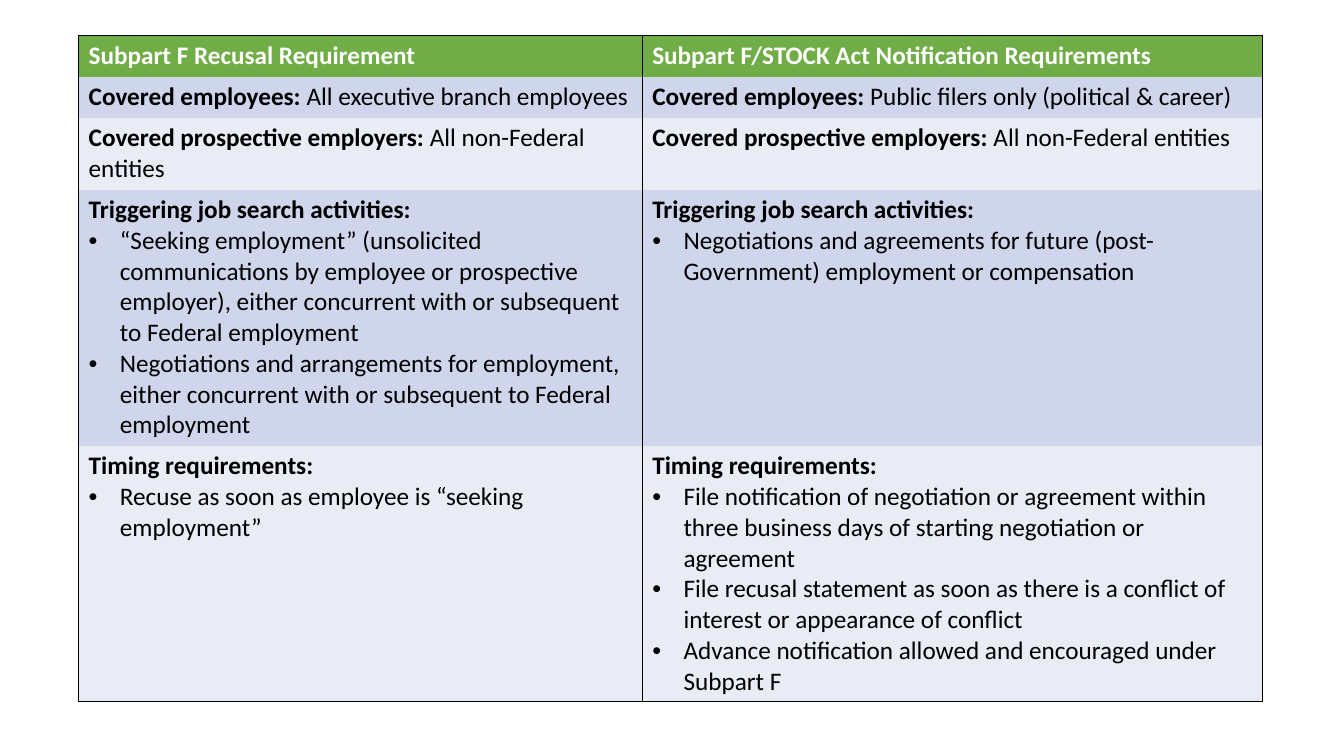
from lxml import etree
from pptx import Presentation
from pptx.dml.color import RGBColor
from pptx.oxml import ns
from pptx.util import Inches, Pt

WHITE = RGBColor(0xFF, 0xFF, 0xFF)
BLACK = RGBColor(0x00, 0x00, 0x00)
GREEN = RGBColor(0x70, 0xAD, 0x47)
BLUE = RGBColor(0xCF, 0xD5, 0xEA)
PALE_BLUE = RGBColor(0xE9, 0xEB, 0xF5)

# Each cell: bold heading, plain text after it, bullets below it
REQUIREMENTS = [
    [("Subpart F Recusal Requirement", "", []),
     ("Subpart F/STOCK Act Notification Requirements", "", [])],
    [("Covered employees: ", "All executive branch employees", []),
     ("Covered employees: ", "Public filers only (political & career)", [])],
    [("Covered prospective employers: ", "All non-Federal entities", []),
     ("Covered prospective employers: ", "All non-Federal entities", [])],
    [("Triggering job search activities:", "", [
        "“Seeking employment” (unsolicited communications by employee or prospective "
        "employer), either concurrent with or subsequent to Federal employment",
        "Negotiations and arrangements for employment, either concurrent with or "
        "subsequent to Federal employment"]),
     ("Triggering job search activities:", "", [
        "Negotiations and agreements for future (post-Government) employment or "
        "compensation"])],
    [("Timing requirements:", "", [
        "Recuse as soon as employee is “seeking employment”"]),
     ("Timing requirements:", "", [
        "File notification of negotiation or agreement within three business days of "
        "starting negotiation or agreement",
        "File recusal statement as soon as there is a conflict of interest or "
        "appearance of conflict",
        "Advance notification allowed and encouraged under Subpart F"])],
]
COLUMN_WIDTHS = [5.59, 6.15]
ROW_HEIGHTS = [0.41, 0.41, 0.71, 2.54, 2.54]
LEFT, TOP = 0.78, 0.35
BULLET_INDENT = Inches(0.31)


def add_run(paragraph, wording, color, bold=False):
    run = paragraph.add_run()
    run.text = wording
    run.font.name = "Calibri"
    run.font.size = Pt(18)
    run.font.bold = bold
    run.font.color.rgb = color


def add_bullet(frame, wording):
    paragraph = frame.add_paragraph()
    add_run(paragraph, wording, BLACK)
    properties = paragraph._p.get_or_add_pPr()
    properties.set("marL", str(BULLET_INDENT))
    properties.set("indent", str(-BULLET_INDENT))
    etree.SubElement(properties, ns.qn("a:buFont")).set("typeface", "Arial")
    etree.SubElement(properties, ns.qn("a:buChar")).set("char", "•")


def set_borders(cell, drawn_sides):
    """Draw the given sides in black and hide the others."""
    properties = cell._tc.get_or_add_tcPr()
    for position, side in enumerate("LRTB"):
        line = etree.Element(ns.qn(f"a:ln{side}"), w=str(Pt(1)))
        if side in drawn_sides:
            fill = etree.SubElement(line, ns.qn("a:solidFill"))
            etree.SubElement(fill, ns.qn("a:srgbClr")).set("val", str(BLACK))
        else:
            etree.SubElement(line, ns.qn("a:noFill"))
        properties.insert(position, line)


def fill_cell(cell, content, row):
    heading, detail, bullets = content
    cell.fill.solid()
    cell.fill.fore_color.rgb = GREEN if row == 0 else BLUE if row % 2 else PALE_BLUE
    first = cell.text_frame.paragraphs[0]
    add_run(first, heading, BLACK if row else WHITE, bold=True)
    if detail:
        add_run(first, detail, BLACK)
    for bullet in bullets:
        add_bullet(cell.text_frame, bullet)
    outer_side = {0: "T", len(REQUIREMENTS) - 1: "B"}.get(row, "")
    set_borders(cell, "LR" + outer_side)


def main():
    deck = Presentation()
    deck.slide_width, deck.slide_height = Inches(13.33), Inches(7.5)
    slide = deck.slides.add_slide(deck.slide_layouts[6])
    table = slide.shapes.add_table(
        len(ROW_HEIGHTS), len(COLUMN_WIDTHS), Inches(LEFT), Inches(TOP),
        Inches(sum(COLUMN_WIDTHS)), Inches(sum(ROW_HEIGHTS))).table
    for column, width in zip(table.columns, COLUMN_WIDTHS):
        column.width = Inches(width)
    for row, contents in enumerate(REQUIREMENTS):
        table.rows[row].height = Inches(ROW_HEIGHTS[row])
        for column, content in enumerate(contents):
            fill_cell(table.cell(row, column), content, row)
    deck.save("out.pptx")


if __name__ == "__main__":
    main()
